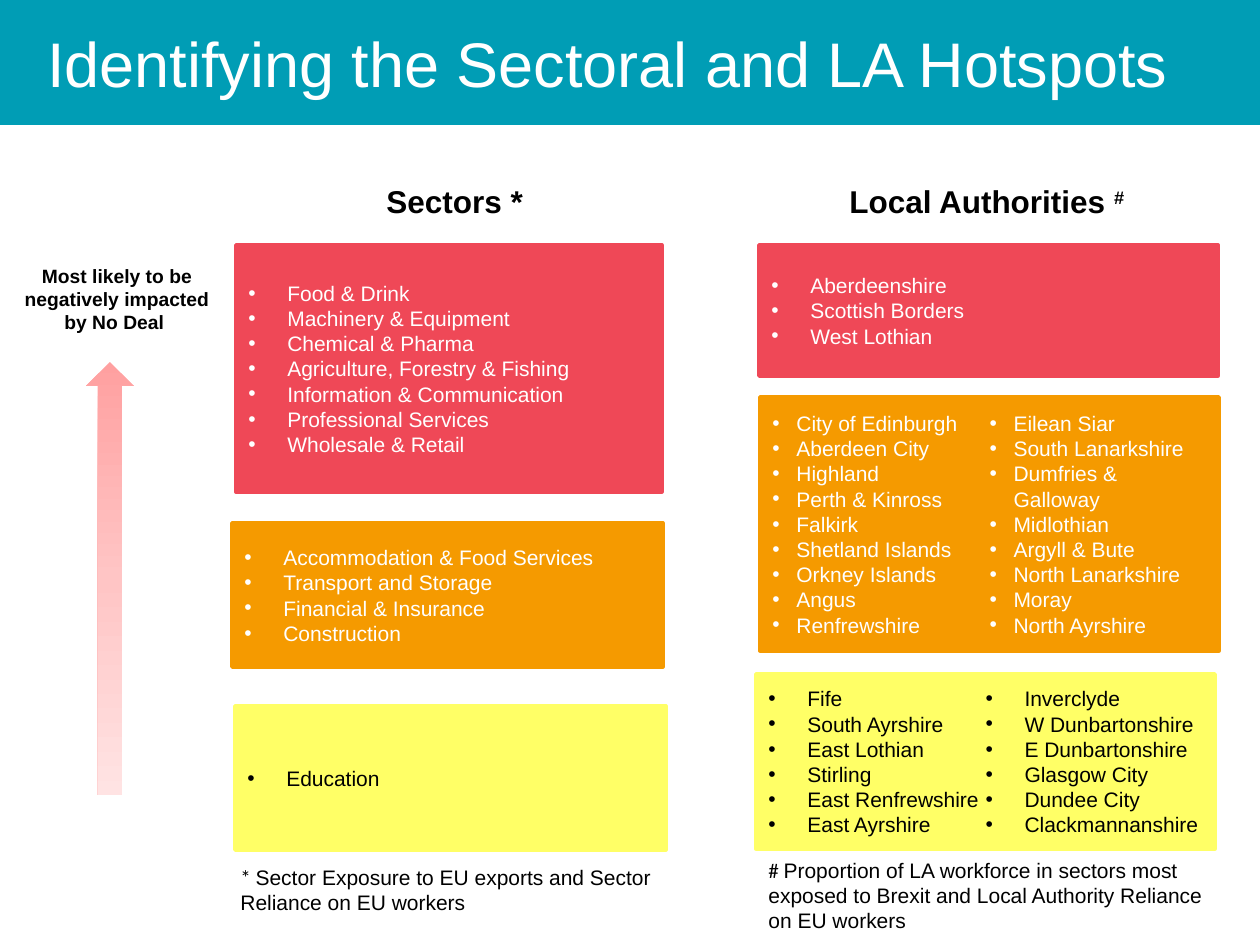
import copy

import pptx
import pptx.dml.color
import pptx.enum.shapes
import pptx.enum.text
import pptx.oxml
import pptx.oxml.ns
import pptx.util
from lxml import etree

RGBColor = pptx.dml.color.RGBColor
TEAL = RGBColor(0x00, 0x9D, 0xB5)
RED = RGBColor(0xEF, 0x48, 0x57)
ORANGE = RGBColor(0xF5, 0x9A, 0x00)
YELLOW = RGBColor(0xFF, 0xFF, 0x66)
WHITE = RGBColor(0xFF, 0xFF, 0xFF)
BLACK = RGBColor(0x00, 0x00, 0x00)
ARROW_COLORS = [
    (0, RGBColor(0xFF, 0xA0, 0xA0)),
    (0.5, RGBColor(0xFF, 0xC5, 0xC5)),
    (1, RGBColor(0xFF, 0xE3, 0xE3)),
]

EMU_PER_PX = 914400 / 126
WIDE_INDENT, NARROW_INDENT = 39, 24

SECTORS_HIGH = ["Food & Drink", "Machinery & Equipment", "Chemical & Pharma",
                "Agriculture, Forestry & Fishing", "Information & Communication",
                "Professional Services", "Wholesale & Retail"]
SECTORS_MEDIUM = ["Accommodation & Food Services", "Transport and Storage",
                  "Financial & Insurance", "Construction"]
SECTORS_LOW = ["Education"]
AUTHORITIES_HIGH = ["Aberdeenshire", "Scottish Borders", "West Lothian"]
AUTHORITIES_MEDIUM = ["City of Edinburgh", "Aberdeen City", "Highland", "Perth & Kinross",
                      "Falkirk", "Shetland Islands", "Orkney Islands", "Angus",
                      "Renfrewshire", "Eilean Siar", "South Lanarkshire",
                      "Dumfries & Galloway", "Midlothian", "Argyll & Bute",
                      "North Lanarkshire", "Moray", "North Ayrshire"]
AUTHORITIES_LOW = ["Fife", "South Ayrshire", "East Lothian", "Stirling",
                   "East Renfrewshire", "East Ayrshire", "Inverclyde",
                   "W Dunbartonshire", "E Dunbartonshire", "Glasgow City",
                   "Dundee City", "Clackmannanshire"]

PANELS = [
    ((236, 245, 426, 247), RED, WHITE, WIDE_INDENT, 1, SECTORS_HIGH),
    ((232, 523, 431, 144), ORANGE, WHITE, WIDE_INDENT, 1, SECTORS_MEDIUM),
    ((760, 397, 459, 254), ORANGE, WHITE, NARROW_INDENT, 2, AUTHORITIES_MEDIUM),
    ((759, 245, 459, 131), RED, WHITE, WIDE_INDENT, 1, AUTHORITIES_HIGH),
    ((235, 706, 431, 144), YELLOW, BLACK, WIDE_INDENT, 1, SECTORS_LOW),
    ((756, 674, 459, 175), YELLOW, BLACK, WIDE_INDENT, 2, AUTHORITIES_LOW),
]

LEFT = pptx.enum.text.PP_ALIGN.LEFT
CENTER = pptx.enum.text.PP_ALIGN.CENTER
LABELS = [
    ((35, 18, 1157, 89), 36, WHITE, False, LEFT,
     [("Identifying the Sectoral and LA Hotspots", "Arial", 0)]),
    ((374, 176, 171, 50), 18, BLACK, True, LEFT, [("Sectors *", "Arial", 0)]),
    ((837, 176, 328, 50), 18, BLACK, True, LEFT,
     [("Local Authorities ", "Arial", 0), ("#", "Arial", 30000)]),
    ((4, 258, 226, 83), 11, BLACK, True, CENTER,
     [("Most likely to be negatively impacted by No Deal ", "Arial", 0)]),
    ((228, 858, 471, 102), 12, BLACK, False, LEFT,
     [("* ", "Calibri", 0),
      ("Sector Exposure to EU exports and Sector Reliance on EU workers", "Arial", 0)]),
    ((756, 851, 471, 152), 12, BLACK, False, LEFT,
     [("# ", "Calibri", 0),
      ("Proportion of LA workforce in sectors most exposed to Brexit and "
       "Local Authority Reliance on EU workers", "Arial", 0)]),
]


def px(length):
    return pptx.util.Emu(round(length * EMU_PER_PX))


def add_run(paragraph, text, size, color, font_name="Arial", bold=False):
    run = paragraph.add_run()
    run.text = text
    run.font.size = pptx.util.Pt(size)
    run.font.name = font_name
    run.font.bold = bold
    run.font.color.rgb = color
    return run


def add_shape(slide, kind, box):
    shape = slide.shapes.add_shape(kind, *map(px, box))
    shape.shadow.inherit = False
    shape.line.fill.background()
    return shape


def add_panel(slide, box, fill, color, indent, columns, items):
    panel = add_shape(slide, pptx.enum.shapes.MSO_SHAPE.RECTANGLE, box)
    panel.fill.solid()
    panel.fill.fore_color.rgb = fill
    panel.line.color.rgb = fill
    panel.line.width = pptx.util.Pt(2)
    frame = panel.text_frame
    frame.word_wrap = True
    frame.vertical_anchor = pptx.enum.text.MSO_ANCHOR.MIDDLE
    if columns > 1:
        body = frame._txBody.bodyPr
        body.set("numCol", str(columns))
        body.set("spcCol", "0")
    for index, item in enumerate(items):
        paragraph = frame.add_paragraph() if index else frame.paragraphs[0]
        paragraph.alignment = LEFT
        properties = paragraph._p.get_or_add_pPr()
        properties.set("marL", str(px(indent)))
        properties.set("indent", str(-px(indent)))
        etree.SubElement(properties, pptx.oxml.ns.qn("a:buFont")).set("typeface", "Arial")
        etree.SubElement(properties, pptx.oxml.ns.qn("a:buChar")).set("char", "•")
        add_run(paragraph, item, 12, color)


def add_label(slide, box, size, color, bold, alignment, runs):
    frame = slide.shapes.add_textbox(*map(px, box)).text_frame
    frame.word_wrap = True
    frame.auto_size = pptx.enum.text.MSO_AUTO_SIZE.SHAPE_TO_FIT_TEXT
    paragraph = frame.paragraphs[0]
    paragraph.alignment = alignment
    for text, font_name, baseline in runs:
        run = add_run(paragraph, text, size, color, font_name, bold)
        if baseline:
            run.font._element.set("baseline", str(baseline))


def add_impact_arrow(slide):
    arrow = add_shape(slide, pptx.enum.shapes.MSO_SHAPE.UP_ARROW, (86, 362, 48, 433))
    arrow.fill.gradient()
    arrow.fill.gradient_angle = 270
    stops = arrow._element.spPr.find(".//" + pptx.oxml.ns.qn("a:gsLst"))
    stops.insert(1, copy.deepcopy(stops[0]))
    for stop, (position, color) in zip(arrow.fill.gradient_stops, ARROW_COLORS):
        stop.position = position
        stop.color.rgb = color


def main():
    presentation = pptx.Presentation()
    presentation.slide_width = px(1260)
    presentation.slide_height = px(945)
    slide = presentation.slides.add_slide(presentation.slide_layouts[6])
    banner = add_shape(slide, pptx.enum.shapes.MSO_SHAPE.RECTANGLE, (0, 0, 1260, 125))
    banner.fill.solid()
    banner.fill.fore_color.rgb = TEAL
    for panel in PANELS:
        add_panel(slide, *panel)
    add_impact_arrow(slide)
    for label in LABELS:
        add_label(slide, *label)
    presentation.save("out.pptx")


if __name__ == "__main__":
    main()
